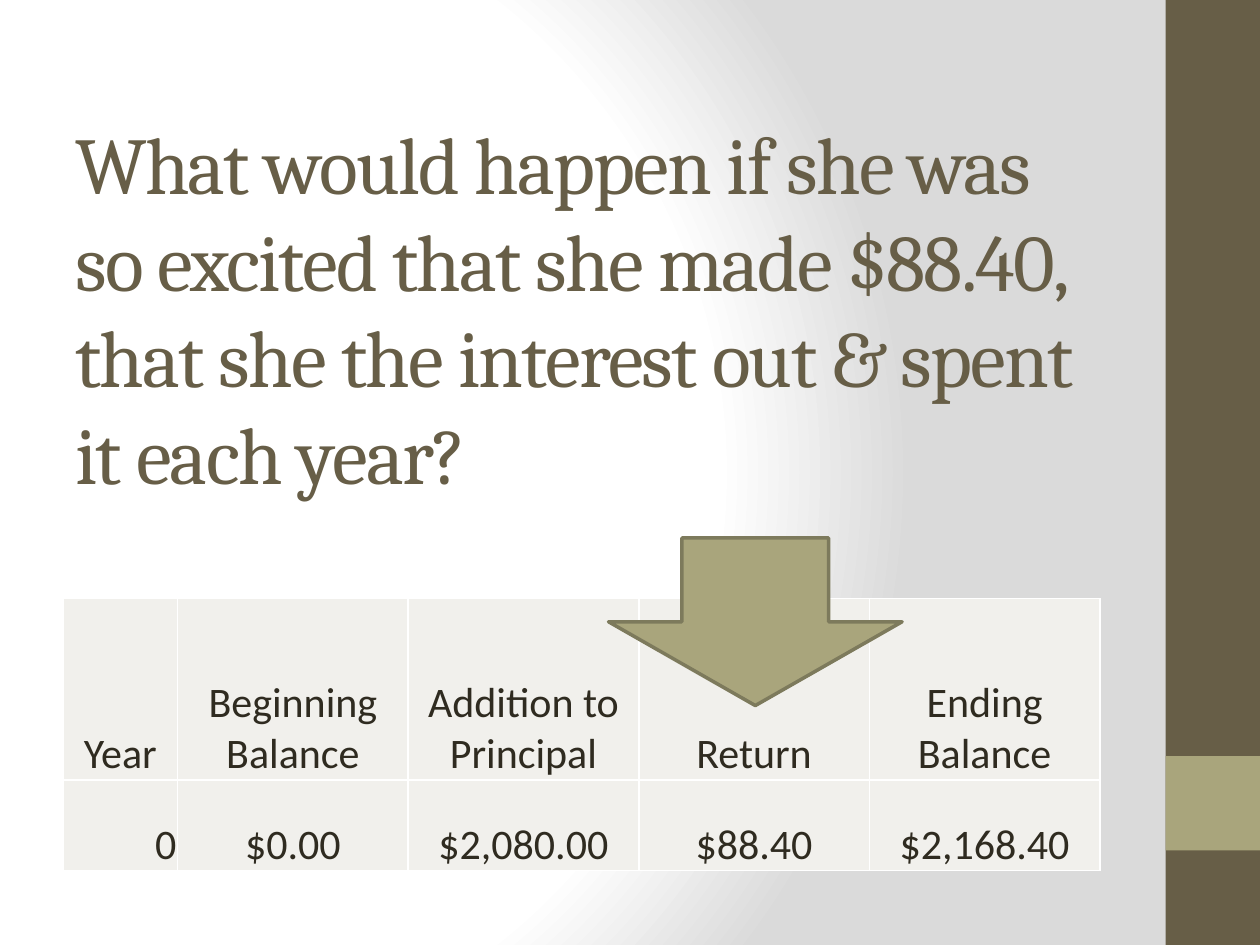
"""Build the slide about withdrawing the yearly interest."""
from pptx import Presentation
from pptx.dml.color import RGBColor
from pptx.enum.shapes import MSO_SHAPE
from pptx.enum.text import MSO_ANCHOR, PP_ALIGN
from pptx.oxml import parse_xml
from pptx.oxml.ns import nsdecls
from pptx.util import Inches, Pt

RECT, DOWN_ARROW = MSO_SHAPE.RECTANGLE, MSO_SHAPE.DOWN_ARROW
MIDDLE, BOTTOM = MSO_ANCHOR.MIDDLE, MSO_ANCHOR.BOTTOM
CENTER, RIGHT = PP_ALIGN.CENTER, PP_ALIGN.RIGHT
BROWN, OLIVE, OLIVE_DARK = "675E47", "A9A57C", "7D7A5C"
INK, CELL, WHITE, GRAY = "2F2B20", "F1F0EC", "FFFFFF", "DADADA"


def rgb(value):
    return RGBColor.from_string(value)


def add_run(p, text, font, size, color):
    r = p.add_run()
    r.text = text
    r.font.name = font
    r.font.size = Pt(size)
    r.font.color.rgb = rgb(color)
    return r


prs = Presentation()
prs.slide_width, prs.slide_height = Inches(10), Inches(7.5)
s = prs.slides.add_slide(prs.slide_layouts[6])

stops = "".join(
    f'<a:gs pos="{pos * 1000}"><a:srgbClr val="{color}"/></a:gs>'
    for pos, color in [(0, WHITE), (75, WHITE), (100, GRAY)]
)
s.background.fill.gradient()
bg_pr = s.element.cSld.bg.bgPr
bg_pr.replace(bg_pr[0], parse_xml(
    f'<a:gradFill {nsdecls("a")} rotWithShape="1"><a:gsLst>{stops}</a:gsLst>'
    '<a:path path="circle"><a:fillToRect l="20000" t="50000" r="100000" b="50000"/>'
    '</a:path></a:gradFill>'
))

for top, height, color in [(0, 7.5, BROWN), (6, 0.75, OLIVE)]:
    sp = s.shapes.add_shape(RECT, Inches(9.25), Inches(top), Inches(0.75), Inches(height))
    sp.shadow.inherit = False
    sp.fill.solid()
    sp.fill.fore_color.rgb = rgb(color)
    sp.line.fill.background()

title = s.shapes.add_textbox(Inches(0.5), Inches(0.3), Inches(8.33), Inches(4.28))
tf = title.text_frame
tf.word_wrap = True
tf.vertical_anchor = MIDDLE
r = add_run(
    tf.paragraphs[0],
    "What would happen if she was so excited that she made $88.40, "
    "that she the interest out & spent it each year?",
    "Cambria", 46, BROWN,
)
r.font._element.set("spc", "-100")

rows = [
    ["Year", "Beginning Balance", "Addition to Principal", "Return", "Ending Balance"],
    ["0", "$0.00", "$2,080.00", "$88.40", "$2,168.40"],
]
widths, heights = [0.91] + [1.83] * 4, [1.44, 0.72]
table = s.shapes.add_table(
    len(rows), len(widths), Inches(0.5), Inches(4.75),
    Inches(sum(widths)), Inches(sum(heights)),
).table
for column, width in zip(table.columns, widths):
    column.width = Inches(width)
for row, height in zip(table.rows, heights):
    row.height = Inches(height)
for i, values in enumerate(rows):
    for j, value in enumerate(values):
        cell = table.cell(i, j)
        cell.vertical_anchor = BOTTOM
        cell.margin_left = cell.margin_right = cell.margin_top = Inches(0.01)
        cell.margin_bottom = 0
        cell.fill.solid()
        cell.fill.fore_color.rgb = rgb(CELL)
        p = cell.text_frame.paragraphs[0]
        p.alignment = RIGHT if value == "0" else CENTER
        add_run(p, value, "Calibri", 24, INK)
        tc_pr = cell._tc.get_or_add_tcPr()
        for k, side in enumerate(["lnL", "lnR", "lnT", "lnB"]):
            tc_pr.insert(k, parse_xml(
                f'<a:{side} {nsdecls("a")} w="{Pt(1)}"><a:solidFill>'
                f'<a:srgbClr val="{WHITE}"/></a:solidFill></a:{side}>'
            ))

arrow = s.shapes.add_shape(DOWN_ARROW, Inches(4.83), Inches(4.27), Inches(2.33), Inches(1.33))
arrow.shadow.inherit = False
arrow.fill.solid()
arrow.fill.fore_color.rgb = rgb(OLIVE)
arrow.line.color.rgb = rgb(OLIVE_DARK)
arrow.line.width = Pt(2)

prs.save("out.pptx")
